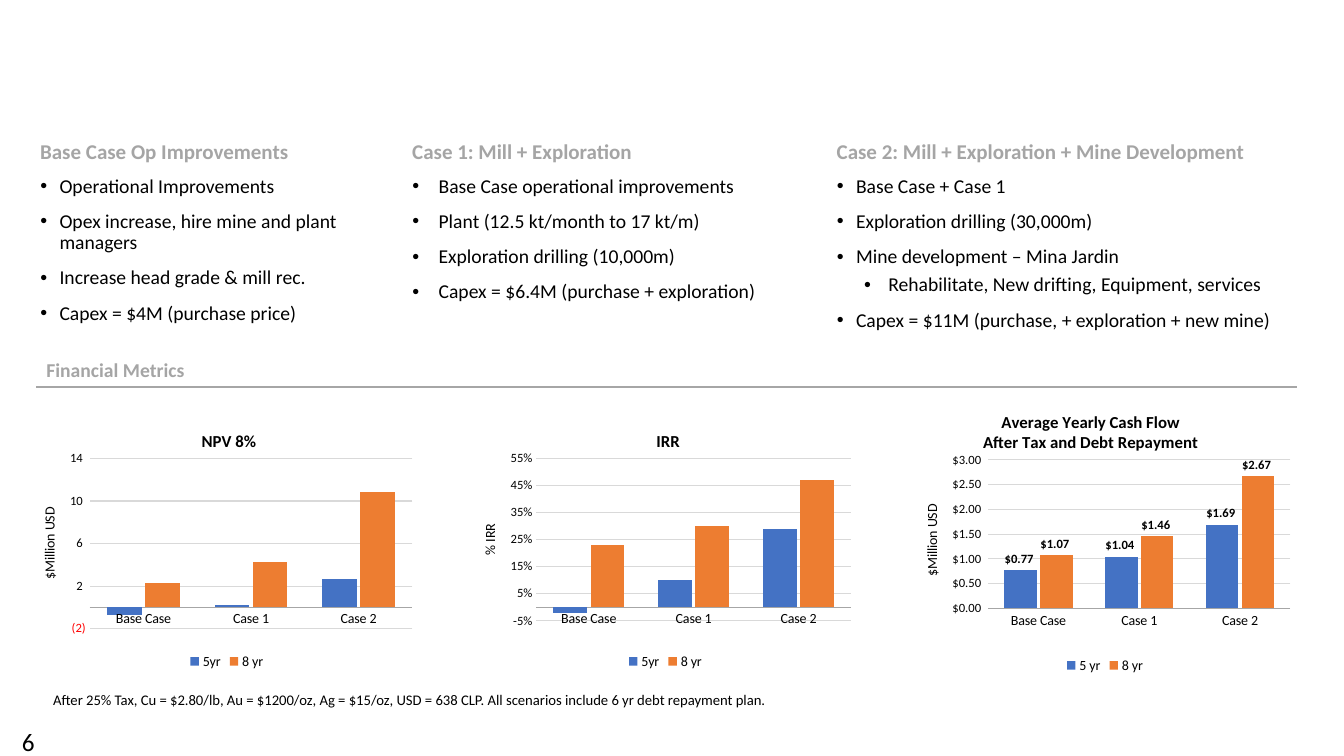
from lxml.etree import SubElement as Sub
from pptx import Presentation
from pptx.chart.data import CategoryChartData as Data
from pptx.dml.color import RGBColor
from pptx.enum.chart import XL_CHART_TYPE as Kind, XL_LABEL_POSITION as Spot
from pptx.enum.chart import XL_LEGEND_POSITION as Side, XL_TICK_MARK as Tick
from pptx.enum.shapes import MSO_CONNECTOR as Conn
from pptx.enum.text import MSO_ANCHOR as Anchor, MSO_AUTO_SIZE as Auto, PP_ALIGN as Align
from pptx.oxml import parse_xml
from pptx.oxml.ns import nsdecls, qn
from pptx.util import Pt

BLACK = RGBColor(0, 0, 0)
GRAY = RGBColor(0xA5, 0xA5, 0xA5)
RULE = RGBColor(0xA6, 0xA6, 0xA6)
GRID = RGBColor(0xD9, 0xD9, 0xD9)
BLUE = RGBColor(0x44, 0x72, 0xC4)
ORANGE = RGBColor(0xED, 0x7D, 0x31)
PX = 9144

# head, left, head width, list width, indent, items as (level, text)
CASES = [
    ("Base Case Op Improvements", 30, 377, 333, 19, [
        (0, "Operational Improvements"),
        (0, "Opex increase, hire mine and plant managers"),
        (0, "Increase head grade & mill rec."),
        (0, "Capex = $4M (purchase price)")]),
    ("Case 1: Mill + Exploration", 399, 407, 389, 26, [
        (0, "Base Case operational improvements"),
        (0, "Plant (12.5 kt/month to 17 kt/m)"),
        (0, "Exploration drilling (10,000m)"),
        (0, "Capex = $6.4M (purchase + exploration)")]),
    ("Case 2: Mill + Exploration + Mine Development", 820, 494, 486, 19, [
        (0, "Base Case + Case 1"),
        (0, "Exploration drilling (30,000m)"),
        (0, "Mine development – Mina Jardin"),
        (1, "Rehabilitate, New drifting, Equipment, services"),
        (0, "Capex = $11M (purchase, + exploration + new mine)")]),
]
METRICS = "Financial Metrics"
NOTE = ("After 25% Tax, Cu = $2.80/lb, Au = $1200/oz, Ag = $15/oz, USD = 638 CLP. "
        "All scenarios include 6 yr debt repayment plan.")
PAGE = "6"
CATS = ["Base Case", "Case 1", "Case 2"]
MONEY = '"$"#,##0.00_);[Red]\\("$"#,##0.00\\)'
CHARTS = [
    dict(title=["NPV 8%"], spot=(0.43, 0.06), unit="$Million USD", box=(25, 408, 400, 260),
         plot=(0.16, 0.18, 0.8, 0.65), axis=(-2, 14, 4), form="#,##0_);[Red]\\(#,##0\\)",
         rows=[("5yr", (-0.7, 0.2, 2.7)), ("8 yr", (2.3, 4.3, 10.8))], tags=False),
    dict(title=["IRR"], spot=(0.47, 0.06), unit="% IRR", box=(460, 408, 400, 260),
         plot=(0.18, 0.18, 0.78, 0.62), axis=(-0.05, 0.55, 0.1), form="0%",
         rows=[("5yr", (-0.02, 0.1, 0.29)), ("8 yr", (0.23, 0.3, 0.47))], tags=False),
    dict(title=["Average Yearly Cash Flow", "After Tax and Debt Repayment"], spot=(0.19, 0.02),
         unit="$Million USD", box=(896, 399, 400, 273),
         plot=(0.21, 0.21, 0.75, 0.54), axis=(0, 3, 0.5), form=MONEY,
         rows=[("5 yr", (0.77, 1.04, 1.69)), ("8 yr", (1.07, 1.46, 2.67))], tags=True),
]


def put(obj, **vals):
    for key, val in vals.items():
        setattr(obj, key, val)


def style(font, size, color=BLACK, bold=False):
    put(font, name="Calibri", size=Pt(size), bold=bold)
    font.color.rgb = color


def place(shape, *box):
    put(shape, **dict(zip(("left", "top", "width", "height"), (n * PX for n in box))))
    put(shape.text_frame, word_wrap=True, auto_size=Auto.NONE, vertical_anchor=Anchor.TOP)
    return shape.text_frame


def write(frame, text, size, color=BLACK, bold=False):
    para = frame.paragraphs[0]
    run = para.add_run()
    run.text = text
    style(run.font, size, color, bold)
    put(para, alignment=Align.LEFT, line_spacing=1.0, space_before=Pt(0))


def label(text, box, size, color=BLACK, bold=False):
    frame = place(slide.shapes.add_textbox(0, 0, 0, 0), *box)
    write(frame, text, size, color, bold)
    return frame


def fill(frame, items, step):
    for n, (level, text) in enumerate(items):
        para = frame.paragraphs[0] if n == 0 else frame.add_paragraph()
        run = para.add_run()
        run.text = text
        style(run.font, 14)
        put(para, level=level, alignment=Align.LEFT, line_spacing=0.9,
            space_before=Pt(5 if level else 10), space_after=Pt(0))
        left, hang = (51, 24) if level else (step, step)
        props = para._p.get_or_add_pPr()
        props.set("marL", str(left * PX))
        props.set("indent", str(-hang * PX))
        Sub(props, qn("a:buFont"), typeface="Arial")
        Sub(props, qn("a:buChar"), char="•")


def layout(node, vals, inner=False):
    for old in node.findall(qn("c:layout")):
        node.remove(old)
    target = '<c:layoutTarget val="inner"/>' if inner else ""
    modes = "".join(f'<c:{k}Mode val="edge"/>' for k in "xy")
    sizes = "".join(f'<c:{k} val="{v}"/>' for k, v in zip("xywh", vals))
    tree = parse_xml(f'<c:layout {nsdecls("c")}><c:manualLayout>{target}{modes}{sizes}'
                     '</c:manualLayout></c:layout>')
    if inner:
        node.insert(0, tree)
    else:
        node.find(qn("c:tx")).addnext(tree)


def caption(title, lines, size, bold):
    frame = title.text_frame
    for n, text in enumerate(lines):
        para = frame.paragraphs[0] if n == 0 else frame.add_paragraph()
        run = para.add_run()
        run.text = text
        style(run.font, size, BLACK, bold)


def graph(info):
    data = Data()
    data.categories = CATS
    for name, vals in info["rows"]:
        data.add_series(name, vals)
    box = [n * PX for n in info["box"]]
    chart = slide.shapes.add_chart(Kind.COLUMN_CLUSTERED, *box, data).chart
    style(chart.font, 10)
    put(chart, has_title=True, has_legend=True)
    caption(chart.chart_title, info["title"], 12, True)
    layout(chart.chart_title._element, info["spot"])
    put(chart.legend, position=Side.BOTTOM, include_in_layout=False)
    style(chart.legend.font, 10)
    cat, val = chart.category_axis, chart.value_axis
    for axis, size in ((cat, 10), (val, 9)):
        put(axis, major_tick_mark=Tick.NONE, minor_tick_mark=Tick.NONE)
        style(axis.tick_labels.font, size)
    low, high, step = info["axis"]
    put(val, minimum_scale=low, maximum_scale=high, major_unit=step,
        has_title=True, has_major_gridlines=True)
    put(val.tick_labels, number_format=info["form"], number_format_is_linked=False)
    caption(val.axis_title, [info["unit"]], 10, False)
    val.format.line.fill.background()
    for line, color in ((cat.format.line, RULE), (val.major_gridlines.format.line, GRID)):
        line.color.rgb = color
        line.width = Pt(0.75)
    plot = chart.plots[0]
    put(plot, gap_width=100, overlap=-10, vary_by_categories=False)
    layout(plot._element.getparent(), info["plot"], True)
    for row, color in zip(plot.series, (BLUE, ORANGE)):
        row.invert_if_negative = False
        row.format.fill.solid()
        row.format.fill.fore_color.rgb = color
        if info["tags"]:
            tags = row.data_labels
            put(tags, show_value=True, position=Spot.OUTSIDE_END,
                number_format=MONEY, number_format_is_linked=False)
            style(tags.font, 9, BLACK, True)


deck = Presentation()
put(deck, slide_width=1333 * PX, slide_height=750 * PX)
slide = deck.slides.add_slide(deck.slide_layouts[4])
title, *bodies = slide.placeholders
spare = bodies.pop()._element
spare.getparent().remove(spare)

for body, (head, left, wide, span, step, items) in zip(bodies, CASES):
    fill(place(body, left, 170, span, 217), items, step)
    frame = label(head, (left, 127, wide, 45), 15, GRAY, True)
    put(frame, margin_top=10 * PX, margin_right=20 * PX, margin_bottom=10 * PX)

write(place(title, 36, 350, 1200, 34), METRICS, 14, GRAY, True)
label(NOTE, (43, 680, 1186, 47), 10.5)
label(PAGE, (12, 716, 36, 25), 18)

rule = slide.shapes.add_connector(Conn.STRAIGHT, *(n * PX for n in (36, 384, 1286, 384)))
rule.line.color.rgb = RULE
rule.line.width = Pt(0)
Sub(rule._element.spPr, qn("a:effectLst"))

for info in CHARTS:
    graph(info)

deck.save("out.pptx")
